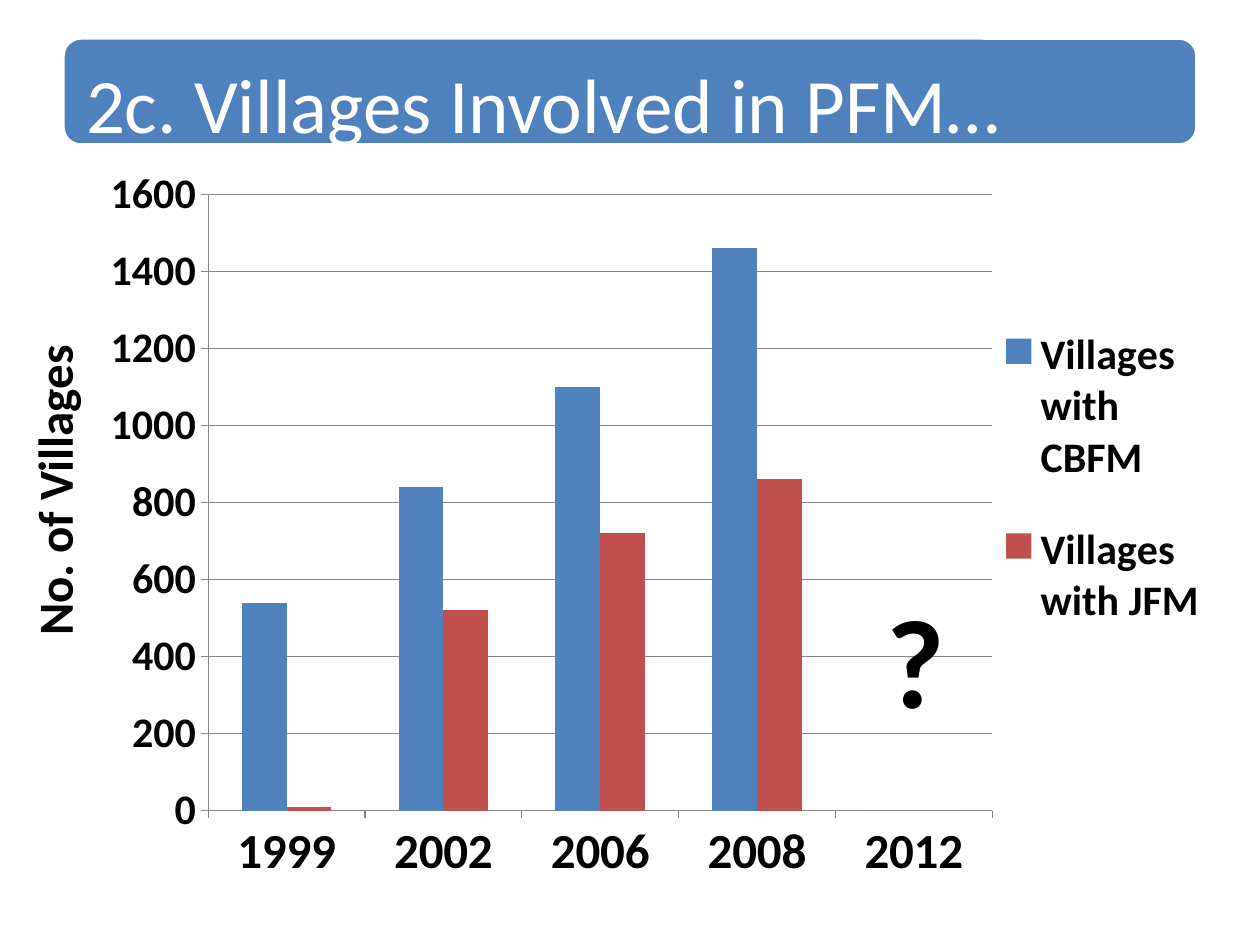
from dataclasses import dataclass

from lxml import etree
from pptx import Presentation
from pptx.chart.data import CategoryChartData
from pptx.dml.color import RGBColor
from pptx.enum.chart import XL_CHART_TYPE, XL_LEGEND_POSITION, XL_TICK_MARK
from pptx.enum.shapes import MSO_SHAPE
from pptx.enum.text import MSO_ANCHOR, MSO_AUTO_SIZE, PP_ALIGN
from pptx.oxml.ns import qn
from pptx.util import Emu, Pt

COLUMNS = XL_CHART_TYPE.COLUMN_CLUSTERED
LEGEND_RIGHT = XL_LEGEND_POSITION.RIGHT
TICK_OUT = XL_TICK_MARK.OUTSIDE
ROUNDED = MSO_SHAPE.ROUNDED_RECTANGLE
TOP = MSO_ANCHOR.TOP
NO_AUTOFIT = MSO_AUTO_SIZE.NONE
LEFT = PP_ALIGN.LEFT
EMU_PER_PX = 914400 // 126
C15 = "http://schemas.microsoft.com/office/drawing/2012/chart"
C15_URI = "{CE6537A1-D6FC-4f65-9D91-7224C49458BB}"

YEARS = ["1999", "2002", "2006", "2008", "2012"]
VILLAGES = {
    "Villages with CBFM": (540, 840, 1100, 1460, 0),
    "Villages with JFM": (10, 520, 720, 860, 0),
}


@dataclass(frozen=True)
class Theme:
    """Colours, font and type sizes of the slide."""
    font: str = "Calibri"
    blue: RGBColor = RGBColor(0x4F, 0x81, 0xBD)
    red: RGBColor = RGBColor(0xC0, 0x50, 0x4D)
    white: RGBColor = RGBColor(0xFF, 0xFF, 0xFF)
    black: RGBColor = RGBColor(0, 0, 0)
    grid: RGBColor = RGBColor(0x86, 0x86, 0x86)
    title: int = 44
    base: int = 10
    large: int = 28
    medium: int = 24
    unknown: int = 72


THEME = Theme()


def px(n):
    """Turn whole px into EMU."""
    return Emu(n * EMU_PER_PX)


def style(font, size, color, bold=True):
    """Format a font with the theme typeface."""
    font.name, font.size, font.bold = THEME.font, Pt(size), bold
    font.color.rgb = color


def set_layout(parent, index, **values):
    """Give a chart part a manual layout at its place among the children."""
    for old in parent.findall(qn("c:layout")):
        parent.remove(old)
    layout = etree.Element(qn("c:layout"))
    manual = etree.SubElement(layout, qn("c:manualLayout"))
    for name, value in values.items():
        etree.SubElement(manual, qn(f"c:{name}")).set("val", str(value))
    parent.insert(index, layout)


def add_title(s, text, box):
    """Put the title placeholder on a rounded banner."""
    title = s.shapes.title
    title.left, title.top, title.width, title.height = box
    tf = title.text_frame
    tf.text = text
    tf.auto_size, tf.vertical_anchor, tf.word_wrap = NO_AUTOFIT, TOP, True
    tf.margin_left = tf.margin_right = px(23)
    tf.margin_top, tf.margin_bottom = px(29), 0
    p = tf.paragraphs[0]
    p.alignment, p.line_spacing = LEFT, 0.9
    style(p.runs[0].font, THEME.title, THEME.white, bold=False)

    banner = s.shapes.add_shape(ROUNDED, *box)
    banner.shadow.inherit = False
    banner.fill.solid()
    banner.fill.fore_color.rgb = THEME.blue
    banner.line.color.rgb = THEME.white
    banner.line.width = Pt(2)
    title.element.addprevious(banner.element)


def format_axis(axis, size):
    """Style the line, ticks and labels of an axis."""
    axis.major_tick_mark = TICK_OUT
    axis.format.line.color.rgb = THEME.grid
    style(axis.tick_labels.font, size, THEME.black)


def format_value_axis(axis, caption):
    """Set the scale, gridlines and turned caption of the value axis."""
    format_axis(axis, THEME.medium)
    axis.minimum_scale, axis.maximum_scale, axis.major_unit = 0, 1600, 200
    axis.major_gridlines.format.line.color.rgb = THEME.grid
    tf = axis.axis_title.text_frame
    tf.text = caption
    style(tf.paragraphs[0].runs[0].font, THEME.large, THEME.black)
    title = axis._element.find(qn("c:title"))
    body = title.find(".//" + qn("a:bodyPr"))
    body.set("rot", "-5400000")
    body.set("vert", "horz")
    set_layout(title, 1, xMode="edge", yMode="edge", x=0.01, y=0.23)


def format_legend(chart):
    """Place the legend to the right of the plot."""
    chart.has_legend = True
    legend = chart.legend
    legend.position, legend.include_in_layout = LEGEND_RIGHT, False
    style(legend.font, THEME.medium, THEME.black)
    set_layout(legend._element, 1, xMode="edge", yMode="edge",
               x=0.81, y=0.17, w=0.18, h=0.48)


def hide_leader_lines(labels):
    """Switch off the lines from moved labels to their points."""
    for old in labels.findall(qn("c:showLeaderLines")):
        old.set("val", "0")
    ext_list = etree.SubElement(labels, qn("c:extLst"))
    ext = etree.SubElement(ext_list, qn("c:ext"), nsmap={"c15": C15})
    ext.set("uri", C15_URI)
    etree.SubElement(ext, f"{{{C15}}}showLeaderLines").set("val", "0")


def mark_unknown(series, index):
    """Label a point without data with a question mark."""
    series.data_labels.show_value = False
    tf = series.points[index].data_label.text_frame
    tf.text = "?"
    style(tf.paragraphs[0].runs[0].font, THEME.unknown, THEME.black)
    labels = series._element.find(qn("c:dLbls"))
    set_layout(labels.find(qn("c:dLbl")), 1, x=0.02, y=-0.08)
    hide_leader_lines(labels)


def add_village_chart(s, box):
    """Add the clustered columns of villages by year."""
    data = CategoryChartData()
    data.categories = YEARS
    for name, values in VILLAGES.items():
        data.add_series(name, values)
    chart = s.shapes.add_chart(COLUMNS, *box, data).chart
    chart.has_title = False
    style(chart.font, THEME.base, THEME.black, bold=False)
    plot = chart.plots[0]
    plot.gap_width, plot.overlap, plot.vary_by_categories = 150, 0, False
    for series, color in zip(plot.series, (THEME.blue, THEME.red)):
        series.format.fill.solid()
        series.format.fill.fore_color.rgb = color
    format_axis(chart.category_axis, THEME.large)
    format_value_axis(chart.value_axis, "No. of Villages")
    format_legend(chart)
    mark_unknown(plot.series[0], len(YEARS) - 1)
    set_layout(chart._chartSpace.find(".//" + qn("c:plotArea")), 0,
               layoutTarget="inner", xMode="edge", yMode="edge",
               x=0.17, y=0.05, w=0.64, h=0.78)


def main():
    """Build and save the slide."""
    prs = Presentation()
    prs.slide_width, prs.slide_height = px(1260), px(945)
    s = prs.slides.add_slide(prs.slide_layouts[5])
    add_title(s, "2c. Villages Involved in PFM…",
              [px(n) for n in (63, 38, 1134, 107)])
    add_village_chart(s, [px(n) for n in (0, 155, 1225, 790)])
    prs.save("out.pptx")


if __name__ == "__main__":
    main()
